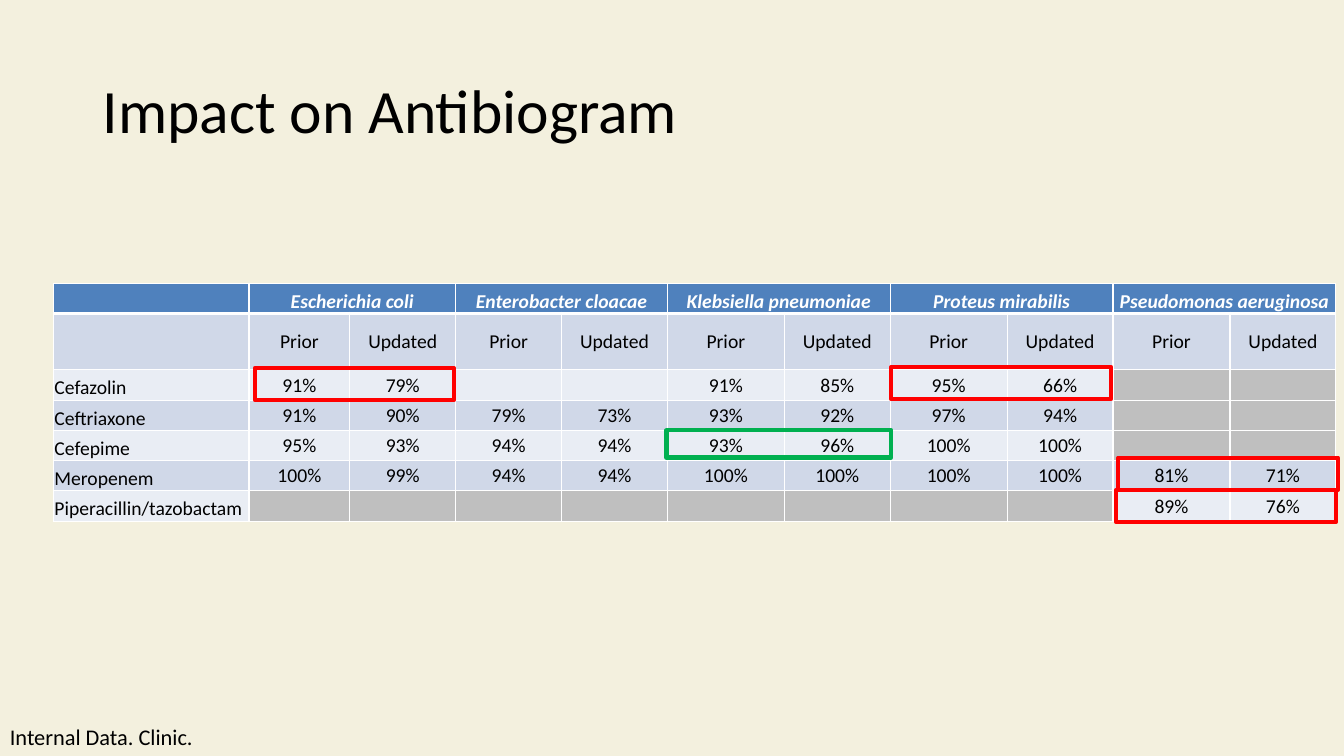
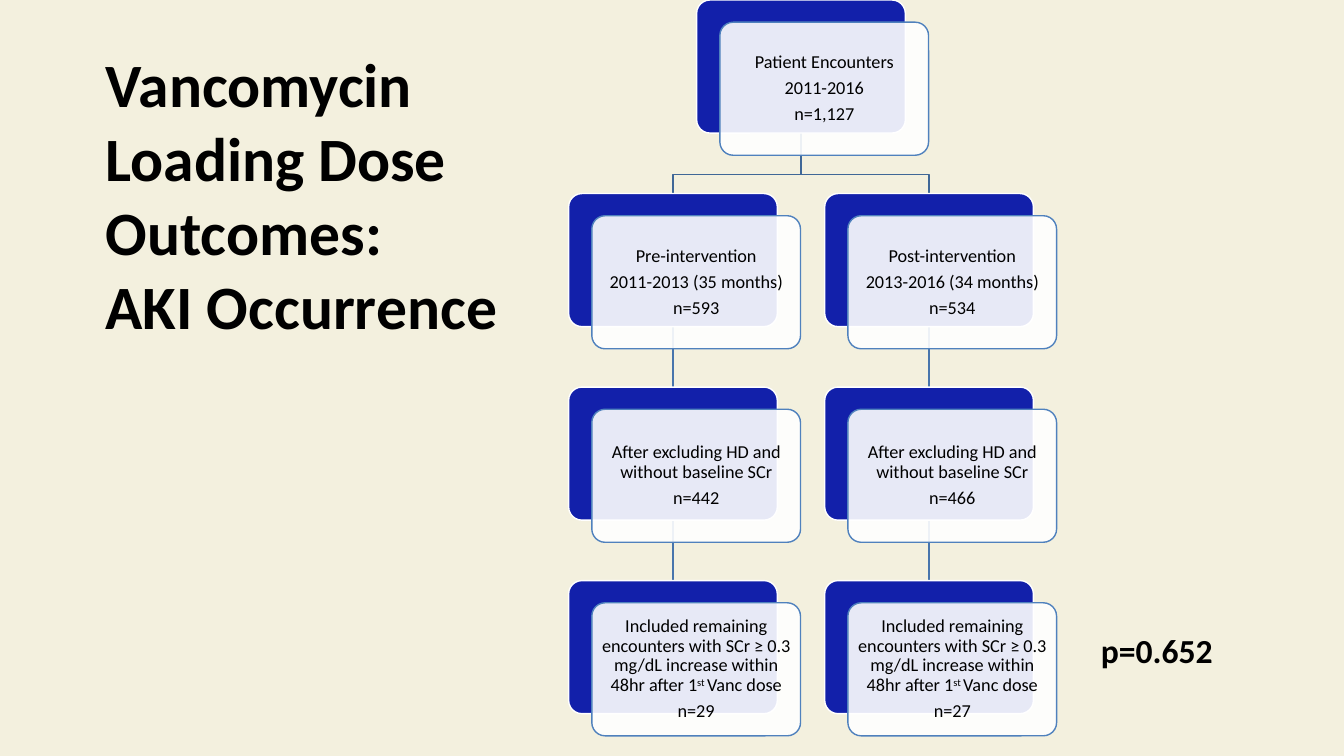
from itertools import product
from lxml.etree import SubElement
from pptx import Presentation
from pptx.dml.color import RGBColor
from pptx.enum.shapes import MSO_CONNECTOR, MSO_SHAPE
from pptx.enum.text import MSO_ANCHOR, PP_ALIGN
from pptx.oxml.ns import qn
from pptx.util import Inches, Pt

FONT = "Calibri"
WIDTH, HEIGHT = 13.33, 7.5
COLORS = {
    "background": "F3F0DE", "text": "000000", "white": "FFFFFF",
    "header": "4F81BD", "band_dark": "D0D8E8", "band_light": "E9EDF4",
    "not_tested": "BFBFBF", "decrease": "FF0000", "increase": "00B050",
    "node": "1220AA", "link": "4875AC", "branch": "3F6797",
}

# Antibiogram: None marks a drug that is not tested, "" an empty cell
ORGANISMS = ["Escherichia coli", "Enterobacter cloacae", "Klebsiella pneumoniae",
             "Proteus mirabilis", "Pseudomonas aeruginosa"]
SUSCEPTIBILITY = [
    ["Cefazolin", "91%", "79%", "", "", "91%", "85%", "95%", "66%", None, None],
    ["Ceftriaxone", "91%", "90%", "79%", "73%", "93%", "92%", "97%", "94%", None, None],
    ["Cefepime", "95%", "93%", "94%", "94%", "93%", "96%", "100%", "100%", None, None],
    ["Meropenem", "100%", "99%", "94%", "94%", "100%", "100%", "100%", "100%", "81%", "71%"],
    ["Piperacillin/tazobactam"] + [None] * 8 + ["89%", "76%"],
]
COLUMNS = [1.94, 1, 1.05, 1.05, 1.05, 1.16, 1.05, 1.16, 1.05, 1.16, 1.05]
ROWS = [0.3, 0.56] + [0.3] * 5
# Offsets from the table's corner, then size
HIGHLIGHTS = [
    ("decrease", 2, 0.84, 1.97, 0.32), ("decrease", 8.31, 0.83, 2.18, 0.32),
    ("decrease", 10.54, 2.05, 2.18, 0.32), ("decrease", 10.56, 1.73, 2.18, 0.32),
    ("increase", 6.08, 1.46, 2.23, 0.27),
]

# Patient flow: one list of steps for each arm
EXCLUSION = "After excluding HD and without baseline SCr"
INCLUSION = [("Included remaining encounters with SCr ≥ 0.3 mg/dL increase "
              "within 48hr after 1", 0), ("st ", 30), ("Vanc dose", 0)]
ENCOUNTERS = ["Patient Encounters", "2011-2016", "n=1,127"]
ARMS = [
    [["Pre-intervention", "2011-2013 (35 months)", "n=593"],
     [EXCLUSION, "n=442"], [INCLUSION, "n=29"]],
    [["Post-intervention", "2013-2016 (34 months)", "n=534"],
     [EXCLUSION, "n=466"], [INCLUSION, "n=27"]],
]


def rgb(name):
    return RGBColor.from_string(COLORS[name])


def write(tf, paragraphs, size=16, color="text", bold=False, italic=False,
          align=PP_ALIGN.LEFT, anchor=MSO_ANCHOR.TOP, spacing=None, after=0):
    """Write paragraphs; each is a string or a list of (text, raise in percent)."""
    tf.word_wrap = True
    tf.vertical_anchor = anchor
    for i, runs in enumerate(paragraphs):
        p = tf.paragraphs[0] if i == 0 else tf.add_paragraph()
        p.alignment, p.line_spacing, p.space_after = align, spacing, Pt(after)
        for text, raised in [(runs, 0)] if isinstance(runs, str) else runs:
            r = p.add_run()
            r.text = text
            f = r.font
            f.name, f.size, f.bold, f.italic = FONT, Pt(size), bold, italic
            f.color.rgb = rgb(color)
            if raised:
                r._r.get_or_add_rPr().set("baseline", str(raised * 1000))


def add_text(s, box, paragraphs, **fmt):
    write(s.shapes.add_textbox(*map(Inches, box)).text_frame, paragraphs, **fmt)


def add_title(s, box, paragraphs, **fmt):
    add_text(s, box, paragraphs, size=44, **fmt)


def add_box(s, kind, box, line, weight, fill=None, opacity=100):
    sp = s.shapes.add_shape(kind, *map(Inches, box))
    sp.shadow.inherit = False
    sp.line.color.rgb, sp.line.width = rgb(line), Pt(weight)
    if fill:
        sp.fill.solid()
        sp.fill.fore_color.rgb = rgb(fill)
        if opacity < 100:
            color = sp.fill._xPr.find(qn("a:solidFill"))[0]
            SubElement(color, qn("a:alpha"), val=str(opacity * 1000))
    else:
        sp.fill.background()
    return sp


def add_slide(prs):
    s = prs.slides.add_slide(prs.slide_layouts[6])
    s.background.fill.solid()
    s.background.fill.fore_color.rgb = rgb("background")
    return s


# Antibiogram table
def fill_cell(cell, text, fill, bottom=1, **fmt):
    cell.margin_left = cell.margin_right = cell.margin_top = Inches(0.01)
    cell.margin_bottom = 0
    tcPr = cell._tc.get_or_add_tcPr()
    for side, weight in (("L", 1), ("R", 1), ("T", 1), ("B", bottom)):
        ln = SubElement(tcPr, qn(f"a:ln{side}"), w=str(Pt(weight)))
        SubElement(SubElement(ln, qn("a:solidFill")), qn("a:srgbClr"), val=COLORS["white"])
    cell.fill.solid()
    cell.fill.fore_color.rgb = rgb(fill)
    if text:
        write(cell.text_frame, [text], size=14, **fmt)
        cell.vertical_anchor = fmt["anchor"]
    else:
        SubElement(cell.text_frame.paragraphs[0]._p, qn("a:endParaRPr"), sz="1400")


def add_antibiogram(s, left, top):
    tbl = s.shapes.add_table(len(ROWS), len(COLUMNS), Inches(left), Inches(top),
                             Inches(sum(COLUMNS)), Inches(sum(ROWS))).table
    for col, width in zip(tbl.columns, COLUMNS):
        col.width = Inches(width)
    for row, height in zip(tbl.rows, ROWS):
        row.height = Inches(height)

    header = [""] + [name for o in ORGANISMS for name in (o, "")]
    for c, text in enumerate(header):
        fill_cell(tbl.cell(0, c), text, "header", bottom=3, color="white", bold=True,
                  italic=True, align=PP_ALIGN.CENTER, anchor=MSO_ANCHOR.BOTTOM)
    for c in range(1, len(COLUMNS), 2):
        tbl.cell(0, c).merge(tbl.cell(0, c + 1))

    body = [[""] + ["Prior", "Updated"] * len(ORGANISMS)] + SUSCEPTIBILITY
    for r, c in product(range(len(body)), range(len(COLUMNS))):
        text = body[r][c]
        band = "band_light" if r % 2 else "band_dark"
        fill_cell(tbl.cell(r + 1, c), text, "not_tested" if text is None else band,
                  align=PP_ALIGN.CENTER if c else PP_ALIGN.LEFT,
                  anchor=MSO_ANCHOR.MIDDLE if c else MSO_ANCHOR.BOTTOM)

    for color, dx, dy, w, h in HIGHLIGHTS:
        add_box(s, MSO_SHAPE.RECTANGLE, (left + dx, top + dy, w, h), color, 3)


# Patient flow chart
def add_node(s, x, y, w, h, paragraphs):
    shift = 0.23
    back = add_box(s, MSO_SHAPE.ROUNDED_RECTANGLE, (x, y, w, h), "white", 1, "node")
    card = add_box(s, MSO_SHAPE.ROUNDED_RECTANGLE, (x + shift, y + 0.22, w, h),
                   "header", 1, "white", opacity=90)
    for sp in (back, card):
        sp.adjustments[0] = 0.1
    tf = card.text_frame
    tf.margin_left = tf.margin_right = tf.margin_top = tf.margin_bottom = Inches(0.05)
    write(tf, paragraphs, size=13, align=PP_ALIGN.CENTER, anchor=MSO_ANCHOR.MIDDLE,
          spacing=0.9, after=4.6)


def add_branch(s, points):
    start, *rest = [(Inches(x), Inches(y)) for x, y in points]
    builder = s.shapes.build_freeform(*start)
    builder.add_line_segments(rest, close=False)
    sp = builder.convert_to_shape()
    sp.shadow.inherit = False
    sp.fill.background()
    sp.line.color.rgb, sp.line.width = rgb("branch"), Pt(1)


def add_link(s, x, y1, y2):
    cx = s.shapes.add_connector(MSO_CONNECTOR.STRAIGHT, *map(Inches, (x, y1, x, y2)))
    cx.line.color.rgb, cx.line.width = rgb("link"), Pt(1)
    SubElement(cx._element.spPr, qn("a:effectLst"))


def add_flow(s, left, top):
    w, h = 2.07, 1.32
    col_step, row_step = 2.54, 1.92
    root_x = left + col_step / 2
    arms = [(left + i * col_step, steps) for i, steps in enumerate(ARMS)]
    # Lines lie behind the nodes
    for x, steps in arms:
        mid, root_mid, bend = x + w / 2, root_x + w / 2, top + 1.73
        add_branch(s, [(root_mid, top + h), (root_mid, bend), (mid, bend),
                       (mid, top + row_step)])
        for i in range(1, len(steps)):
            add_link(s, mid, top + i * row_step + h, top + (i + 1) * row_step)
    add_node(s, root_x, top, w, h, ENCOUNTERS)
    for x, steps in arms:
        for i, paragraphs in enumerate(steps, 1):
            add_node(s, x, top + i * row_step, w, h, paragraphs)


def antibiogram_slide(prs):
    s = add_slide(prs)
    add_title(s, (0.92, 0.4, 11.5, 1.45), ["Impact on Antibiogram"],
              anchor=MSO_ANCHOR.MIDDLE, spacing=0.9)
    add_text(s, (0, 7.13, 10, 0.37), ["Internal Data. Clinic."])
    add_antibiogram(s, 0.53, 2.81)


def outcomes_slide(prs):
    s = add_slide(prs)
    add_flow(s, 5.64, 0)
    add_title(s, (0.95, 0.41, 4.96, 3.06),
              ["Vancomycin Loading Dose Outcomes:", "AKI Occurrence"], bold=True)
    add_text(s, (10.82, 6.2, 1.32, 0.5), ["p=0.652"], size=24, bold=True)


def main():
    prs = Presentation()
    prs.slide_width, prs.slide_height = Inches(WIDTH), Inches(HEIGHT)
    antibiogram_slide(prs)
    outcomes_slide(prs)
    prs.save("out.pptx")


if __name__ == "__main__":
    main()
